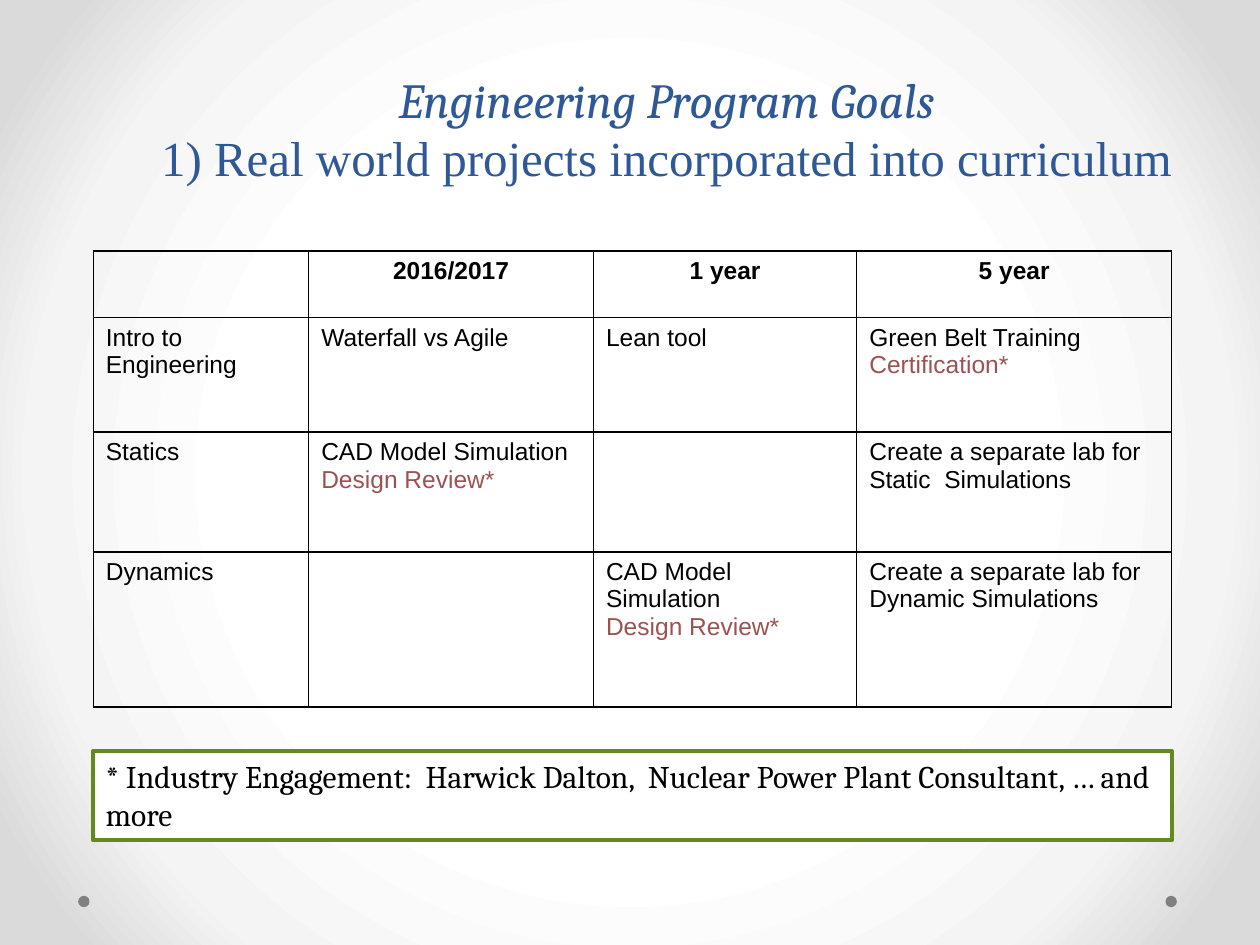
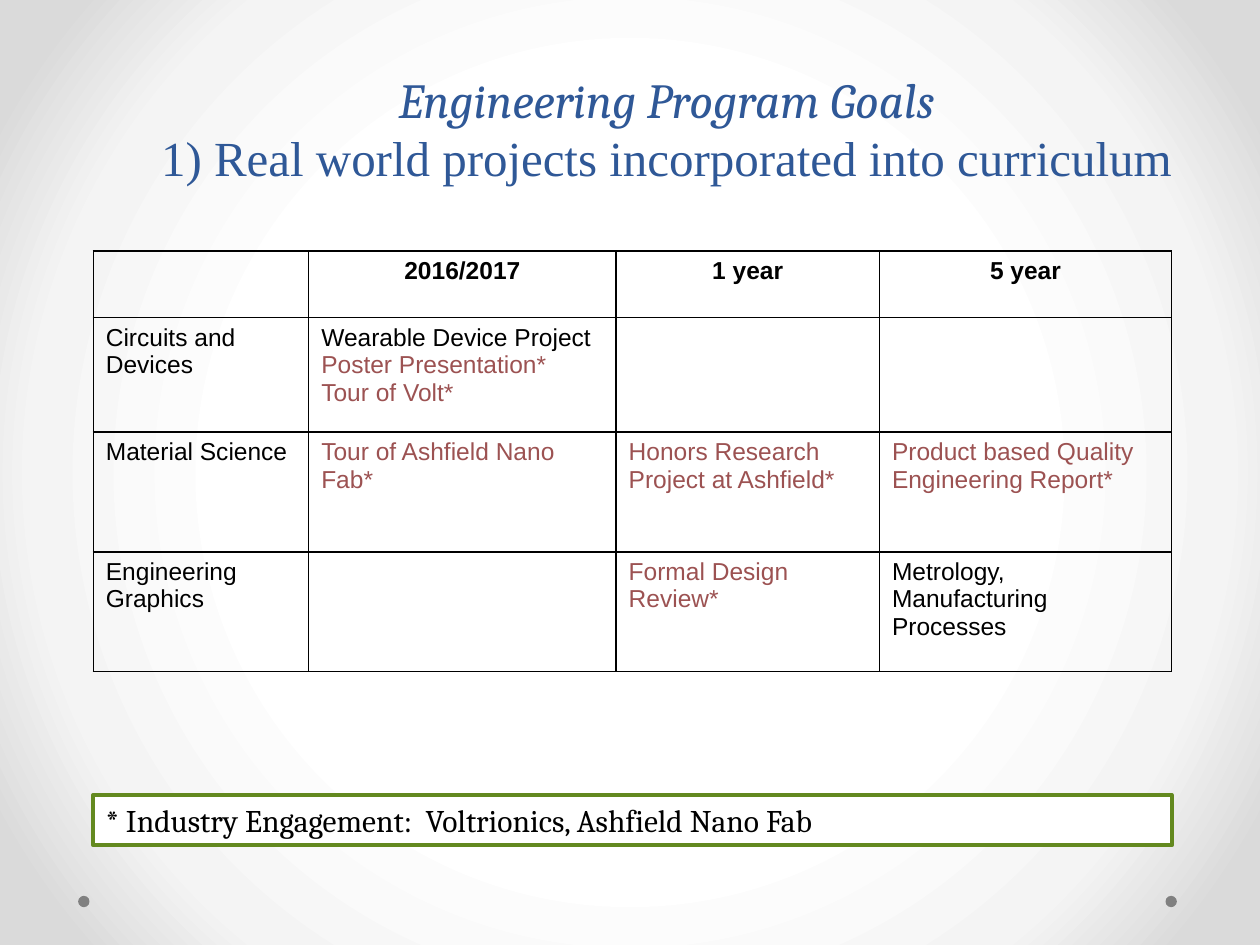
from dataclasses import dataclass

from pptx import Presentation
from pptx.dml.color import RGBColor
from pptx.enum.shapes import MSO_SHAPE
from pptx.enum.text import MSO_ANCHOR, PP_ALIGN
from pptx.oxml import parse_xml
from pptx.oxml.ns import nsdecls
from pptx.util import Inches, Pt


@dataclass(frozen=True)
class Theme:
    title_color: str = "2F5897"
    ink: str = "000000"
    engagement_color: str = "9C5252"
    note_fill: str = "FFFFFF"
    note_line: str = "63891F"
    dot_color: str = "808080"
    glow: tuple = ((50, "FFFFFF"), (76, "F4F4F4"), (92, "DADADA"))
    title_size: int = 28
    table_size: int = 14
    note_size: int = 18
    border_width: float = 1
    note_width: float = 2.25
    serif: str = "Cambria"
    goal_font: str = "Times New Roman"
    sans: str = "Arial"


THEME = Theme()
CONTENT_LEFT, CONTENT_WIDTH = 0.74, 8.56
TABLE_TOP = 1.99
TITLE_LINES = (
    ("Engineering Program Goals", THEME.serif, True),
    ("1) Real world projects incorporated into curriculum", THEME.goal_font, False),
)
HEADER = ("", "2016/2017", "1 year", "5 year")

GOALS = (
    {
        "columns": (1.71, 2.26, 2.09, 2.5),
        "row_heights": (0.53, 0.91, 0.95, 1.23),
        "courses": (
            ("Intro to Engineering", "Waterfall vs Agile", "Lean tool",
             "Green Belt Training |Certification*"),
            ("Statics", "CAD Model Simulation\nDesign Review*", "",
             "Create a separate lab for Static  Simulations"),
            ("Dynamics", "", "CAD Model Simulation\nDesign Review*",
             "Create a separate lab for Dynamic Simulations"),
        ),
        "note": "* Industry Engagement:  Harwick Dalton,  "
                "Nuclear Power Plant Consultant, … and more",
        "note_top": 5.96,
        "note_height": 0.71,
    },
    {
        "columns": (1.71, 2.44, 2.09, 2.32),
        "row_heights": (0.53, 0.91, 0.95, 0.95),
        "courses": (
            ("Circuits and Devices",
             "Wearable Device Project\nPoster Presentation*\nTour of Volt*", "", ""),
            ("Material Science", "Tour of Ashfield Nano Fab*",
             "Honors Research Project at Ashfield*",
             "Product based Quality Engineering Report*"),
            ("Engineering Graphics", "", "Formal Design Review*",
             "Metrology, Manufacturing Processes"),
        ),
        "note": "* Industry Engagement:  Voltrionics, Ashfield Nano Fab",
        "note_top": 6.31,
        "note_height": 0.4,
    },
)


def add_run(paragraph, text, color, **formats):
    run = paragraph.add_run()
    run.text = text
    run.font.color.rgb = RGBColor.from_string(color)
    for attribute, value in formats.items():
        setattr(run.font, attribute, value)


def add_glow(slide):
    stops = "".join(
        f'<a:gs pos="{position * 1000}"><a:srgbClr val="{color}"/></a:gs>'
        for position, color in THEME.glow
    )
    slide.element.cSld.insert(0, parse_xml(
        f'<p:bg {nsdecls("p", "a")}><p:bgPr><a:gradFill rotWithShape="1">'
        f'<a:gsLst>{stops}</a:gsLst><a:path path="circle">'
        '<a:fillToRect l="50000" t="50000" r="50000" b="50000"/></a:path>'
        '</a:gradFill><a:effectLst/></p:bgPr></p:bg>'
    ))


def add_shape(slide, kind, left, top, width, height, fill):
    shape = slide.shapes.add_shape(
        kind, Inches(left), Inches(top), Inches(width), Inches(height))
    shape.shadow.inherit = False
    shape.fill.solid()
    shape.fill.fore_color.rgb = RGBColor.from_string(fill)
    shape.line.fill.background()
    return shape


def add_footer_dots(slide):
    for left in (9.25, 0.62):
        add_shape(slide, MSO_SHAPE.OVAL, left, 7.11, 0.09, 0.09, THEME.dot_color)


def add_title(slide):
    title = slide.shapes.add_textbox(
        Inches(1), Inches(0.5), Inches(8.58), Inches(0.84)).text_frame
    title.word_wrap = True
    for index, (text, font, italic) in enumerate(TITLE_LINES):
        line = title.add_paragraph() if index else title.paragraphs[0]
        line.alignment = PP_ALIGN.CENTER
        add_run(line, text, THEME.title_color, name=font,
                size=Pt(THEME.title_size), italic=italic)


def set_borders(cell):
    properties = cell._tc.get_or_add_tcPr()
    for index, side in enumerate(("lnL", "lnR", "lnT", "lnB")):
        properties.insert(index, parse_xml(
            f'<a:{side} {nsdecls("a")} w="{Pt(THEME.border_width)}">'
            f'<a:solidFill><a:srgbClr val="{THEME.ink}"/></a:solidFill></a:{side}>'
        ))


def fill_cell(cell, content, is_header):
    cell.fill.background()
    set_borders(cell)
    if not content:
        return
    for index, text in enumerate(content.split("\n")):
        frame = cell.text_frame
        paragraph = frame.add_paragraph() if index else frame.paragraphs[0]
        paragraph.alignment = PP_ALIGN.CENTER if is_header else PP_ALIGN.LEFT
        for part in text.split("|"):
            color = THEME.engagement_color if part.endswith("*") else THEME.ink
            add_run(paragraph, part, color, name=THEME.sans,
                    size=Pt(THEME.table_size), bold=is_header)


def add_course_table(slide, goal):
    rows = (HEADER, *goal["courses"])
    courses = slide.shapes.add_table(
        len(rows), len(HEADER), Inches(CONTENT_LEFT), Inches(TABLE_TOP),
        Inches(CONTENT_WIDTH), Inches(sum(goal["row_heights"]))).table
    courses.first_row = courses.horz_banding = False
    for column, width in zip(courses.columns, goal["columns"]):
        column.width = Inches(width)
    for row, height in zip(courses.rows, goal["row_heights"]):
        row.height = Inches(height)
    for row_index, row in enumerate(rows):
        for column_index, content in enumerate(row):
            fill_cell(courses.cell(row_index, column_index), content, row_index == 0)


def add_engagement_note(slide, goal):
    note = add_shape(slide, MSO_SHAPE.RECTANGLE, CONTENT_LEFT, goal["note_top"],
                     CONTENT_WIDTH, goal["note_height"], THEME.note_fill)
    note.line.color.rgb = RGBColor.from_string(THEME.note_line)
    note.line.width = Pt(THEME.note_width)
    frame = note.text_frame
    frame.word_wrap = True
    frame.vertical_anchor = MSO_ANCHOR.TOP
    frame.paragraphs[0].alignment = PP_ALIGN.LEFT
    add_run(frame.paragraphs[0], goal["note"], THEME.ink,
            name=THEME.serif, size=Pt(THEME.note_size))


def main():
    presentation = Presentation()
    presentation.slide_width = Inches(10)
    presentation.slide_height = Inches(7.5)
    for goal in GOALS:
        slide = presentation.slides.add_slide(presentation.slide_layouts[6])
        add_glow(slide)
        add_footer_dots(slide)
        add_title(slide)
        add_course_table(slide, goal)
        add_engagement_note(slide, goal)
    presentation.save("out.pptx")


if __name__ == "__main__":
    main()
